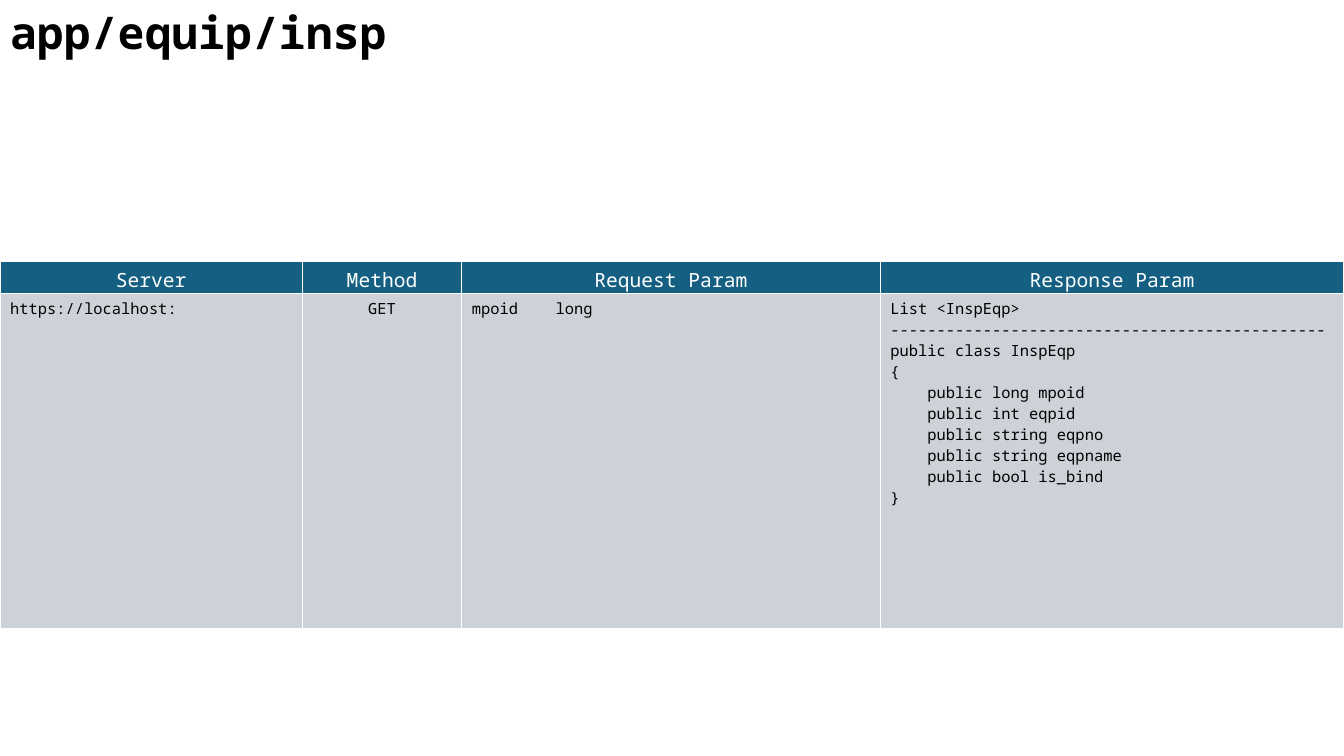
from lxml.etree import SubElement
from pptx import Presentation
from pptx.dml.color import RGBColor
from pptx.enum.text import MSO_ANCHOR, MSO_AUTO_SIZE, PP_ALIGN
from pptx.oxml.ns import qn
from pptx.util import Inches, Pt

COLORS = {"header": "156082", "body": "CCD2D8", "white": "FFFFFF", "black": "000000"}
FONT = "Noto Sans Mono"
TITLE = "app/equip/insp"
COLUMN_WIDTHS = [3, 1.58, 4.15, 4.6]
HEADERS = ["Server", "Method", "Request Param", "Response Param"]
RESPONSE = """List <InspEqp>
-----------------------------------------------
public class InspEqp
{
    public long mpoid
    public int eqpid
    public string eqpno
    public string eqpname
    public bool is_bind
}"""
VALUES = ["https://localhost:", "GET", "mpoid\tlong", RESPONSE]
LEFT, CENTER = PP_ALIGN.LEFT, PP_ALIGN.CENTER
ROWS = [
    {"texts": HEADERS, "height": 0.32, "fill": "header", "color": "white",
     "size": 14, "aligns": [CENTER] * 4},
    {"texts": VALUES, "height": 3.33, "fill": "body", "color": "black",
     "size": 11, "aligns": [LEFT, CENTER, LEFT, LEFT]},
]
MARGINS = {"margin_left": Inches(0.1), "margin_right": Inches(0.1),
           "margin_top": Inches(0.05), "margin_bottom": 0,
           "vertical_anchor": MSO_ANCHOR.TOP}
TYPE_TAB = 0.83


def set_attributes(target, values):
    for name, value in values.items():
        setattr(target, name, value)


def format_paragraph(paragraph, size, color, align, bold=False):
    paragraph.alignment = align
    set_attributes(paragraph.font, {"name": FONT, "size": Pt(size), "bold": bold})
    paragraph.font.color.rgb = RGBColor.from_string(COLORS[color])


def add_tab_stop(paragraph, position):
    tabs = SubElement(paragraph._p.get_or_add_pPr(), qn("a:tabLst"))
    SubElement(tabs, qn("a:tab"), pos=str(Inches(position)), algn="l")


def add_borders(cell):
    properties = cell._tc.get_or_add_tcPr()
    for index, side in enumerate(("lnL", "lnR", "lnT", "lnB")):
        line = SubElement(properties, qn(f"a:{side}"), w=str(Pt(1)))
        fill = SubElement(line, qn("a:solidFill"))
        SubElement(fill, qn("a:srgbClr"), val=COLORS["white"])
        properties.insert(index, line)


def fill_cell(cell, text, align, row):
    cell.fill.solid()
    cell.fill.fore_color.rgb = RGBColor.from_string(COLORS[row["fill"]])
    add_borders(cell)
    set_attributes(cell, MARGINS)
    cell.text_frame.text = text
    for paragraph in cell.text_frame.paragraphs:
        if "\t" in text:
            add_tab_stop(paragraph, TYPE_TAB)
        format_paragraph(paragraph, row["size"], row["color"], align)


def place_title(slide, left, top, width, height):
    title = slide.shapes.title
    set_attributes(title, {"left": Inches(left), "top": Inches(top),
                           "width": Inches(width), "height": Inches(height)})
    frame = title.text_frame
    set_attributes(frame, {**MARGINS, "word_wrap": True,
                           "auto_size": MSO_AUTO_SIZE.NONE})
    frame.text = TITLE
    format_paragraph(frame.paragraphs[0], 32, "black", LEFT, bold=True)


def add_endpoint_table(slide, left, top, width, height):
    table = slide.shapes.add_table(
        len(ROWS), len(HEADERS), Inches(left), Inches(top),
        Inches(width), Inches(height)).table
    for column, share in zip(table.columns, COLUMN_WIDTHS):
        column.width = Inches(width * share / sum(COLUMN_WIDTHS))
    for row_index, row in enumerate(ROWS):
        table.rows[row_index].height = Inches(row["height"])
        for column_index, text in enumerate(row["texts"]):
            fill_cell(table.cell(row_index, column_index), text,
                      row["aligns"][column_index], row)


def main():
    presentation = Presentation()
    presentation.slide_width = Inches(13.33)
    presentation.slide_height = Inches(7.5)
    slide = presentation.slides.add_slide(presentation.slide_layouts[5])
    place_title(slide, 0, 0, 9.45, 0.64)
    add_endpoint_table(slide, 0, 2.59, 13.33, sum(row["height"] for row in ROWS))
    presentation.save("out.pptx")


if __name__ == "__main__":
    main()
